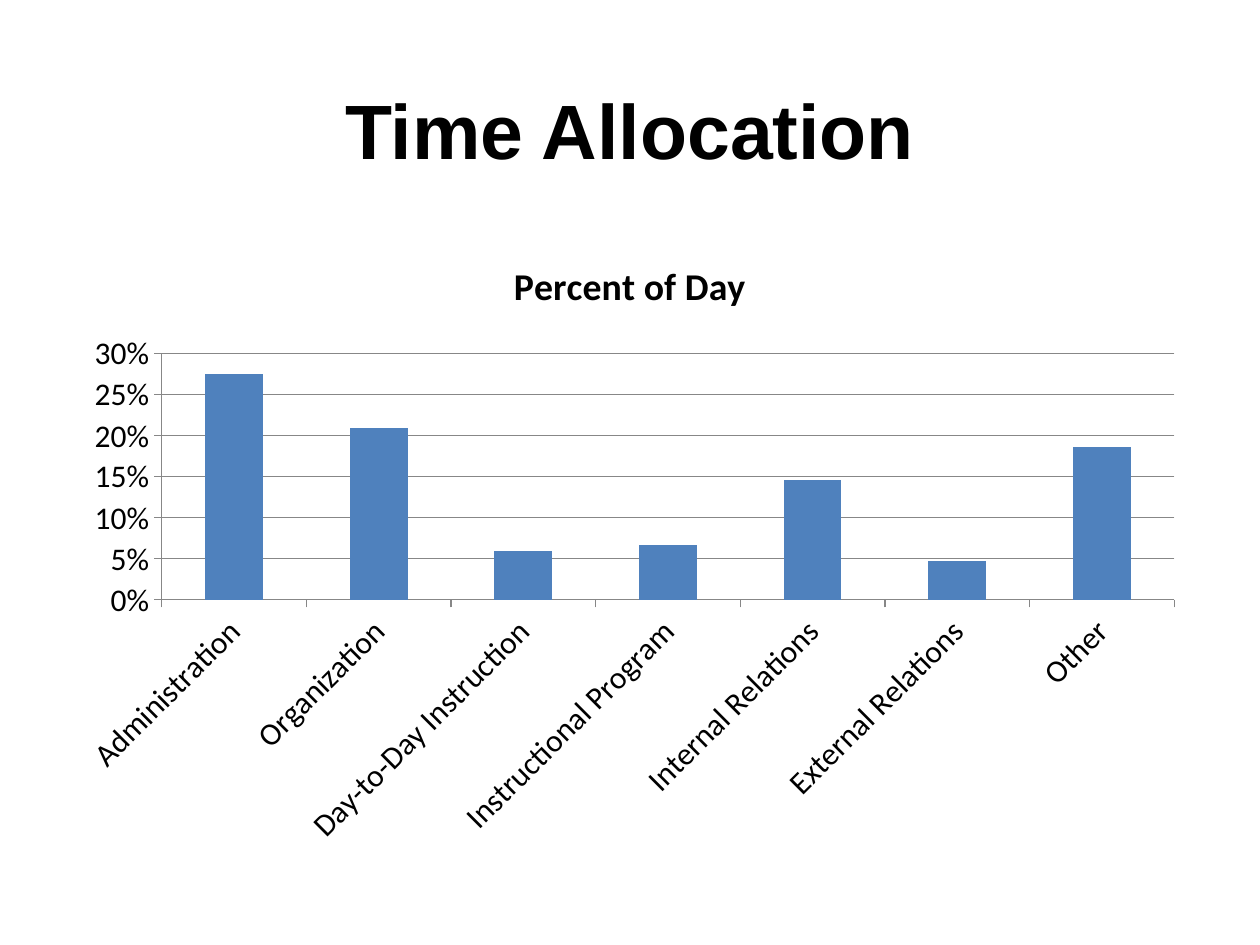
from dataclasses import dataclass

from pptx import Presentation
from pptx.chart.data import CategoryChartData
from pptx.dml.color import RGBColor
from pptx.enum.chart import XL_CHART_TYPE, XL_TICK_MARK
from pptx.enum.text import MSO_ANCHOR, PP_ALIGN
from pptx.oxml.ns import qn
from pptx.util import Pt

COLUMN = XL_CHART_TYPE.COLUMN_CLUSTERED
OUTSIDE = XL_TICK_MARK.OUTSIDE
MIDDLE = MSO_ANCHOR.MIDDLE
CENTER = PP_ALIGN.CENTER


@dataclass(frozen=True)
class Theme:
    text: RGBColor = RGBColor(0, 0, 0)
    bar: RGBColor = RGBColor(0x4F, 0x81, 0xBD)
    line: RGBColor = RGBColor(0x87, 0x87, 0x87)
    title_size: float = 44
    chart_title_size: float = 21.6
    label_size: float = 18


theme = Theme()


def write(tf, text, size, font="Calibri", bold=False, align=CENTER):
    p = tf.paragraphs[0]
    p.alignment = align
    r = p.add_run()
    r.text = text
    r.font.name = font
    r.font.size = Pt(size)
    r.font.bold = bold
    r.font.color.rgb = theme.text


prs = Presentation()
prs.slide_width, prs.slide_height = Pt(720), Pt(540)
s = prs.slides.add_slide(prs.slide_layouts[5])

# Title
title = s.shapes.title
title.left, title.top, title.width, title.height = Pt(36), Pt(28.8), Pt(648), Pt(90)
title.text_frame.vertical_anchor = MIDDLE
write(title.text_frame, "Time Allocation", theme.title_size, font="Arial", bold=True)

# Chart
time_shares = {
    "Administration": 0.275,
    "Organization": 0.209,
    "Day-to-Day Instruction": 0.059,
    "Instructional Program": 0.067,
    "Internal Relations": 0.146,
    "External Relations": 0.047,
    "Other": 0.187,
}
data = CategoryChartData(number_format="0.0%")
data.categories = list(time_shares)
data.add_series("Percent of Day", list(time_shares.values()))
chart = s.shapes.add_chart(COLUMN, Pt(36), Pt(133.2), Pt(648), Pt(356.4), data).chart
chart.has_legend = False
chart.font.name = "Calibri"
chart.font.size = Pt(theme.label_size)
chart.font.color.rgb = theme.text
chart.has_title = True
write(chart.chart_title.text_frame, "Percent of Day", theme.chart_title_size, bold=True)
chart.chart_title.include_in_layout = False

plot = chart.plots[0]
plot.gap_width = 150
plot.vary_by_categories = False
fill = plot.series[0].format.fill
fill.solid()
fill.fore_color.rgb = theme.bar

# Axes
cat_axis, val_axis = chart.category_axis, chart.value_axis
val_axis.minimum_scale, val_axis.maximum_scale, val_axis.major_unit = 0, 0.3, 0.05
val_axis.tick_labels.number_format = "0%"
val_axis.tick_labels.number_format_is_linked = False
val_axis.has_major_gridlines = True
for axis in (cat_axis, val_axis):
    axis.major_tick_mark = OUTSIDE
    axis.tick_labels.font.size = Pt(theme.label_size)
for part in (cat_axis, val_axis, val_axis.major_gridlines):
    part.format.line.color.rgb = theme.line
    part.format.line.width = Pt(0.75)

# Slanted category labels, in 60000ths of a degree
body = cat_axis._element.find(qn("c:txPr")).find(qn("a:bodyPr"))
body.set("rot", str(-45 * 60000))
body.set("vert", "horz")

prs.save("out.pptx")
